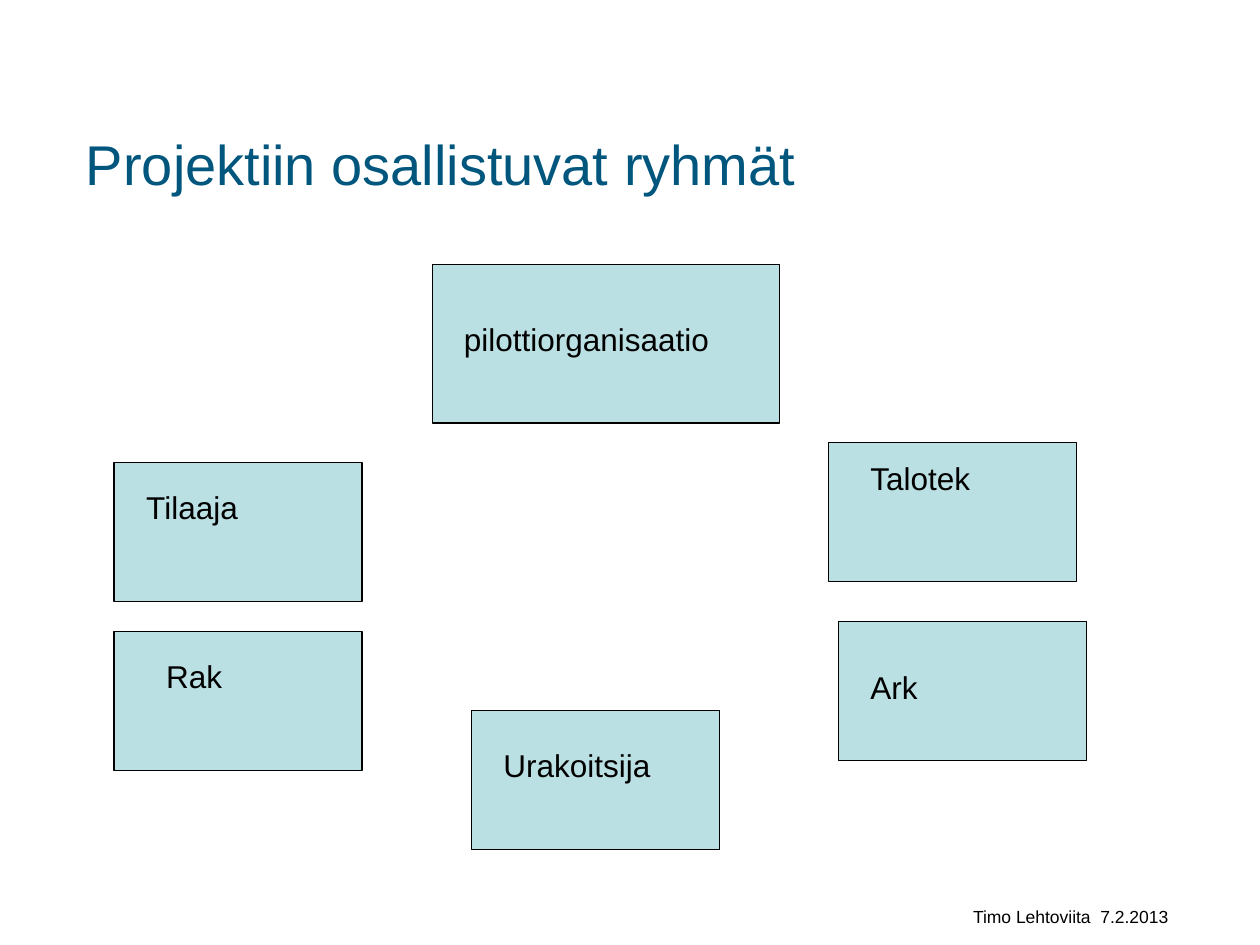
"""Build a slide showing the groups that take part in the project."""
from pptx import Presentation
from pptx.dml.color import RGBColor
from pptx.enum.shapes import MSO_SHAPE
from pptx.enum.text import MSO_ANCHOR, PP_ALIGN
from pptx.util import Pt

RECTANGLE = MSO_SHAPE.RECTANGLE
TOP, MIDDLE = MSO_ANCHOR.TOP, MSO_ANCHOR.MIDDLE
LEFT, RIGHT = PP_ALIGN.LEFT, PP_ALIGN.RIGHT

TITLE = "Projektiin osallistuvat ryhmät"
FOOTER = "Timo Lehtoviita  7.2.2013"
GROUP_SIZE = (141.75, 79.4)
LABEL_SIZE = (113, 51)
PILOT_SIZE = (198.5, 90.7)
PILOT_LABEL_SIZE = (164, 29)
GROUPS = [
    ("pilottiorganisaatio", (247, 151), PILOT_SIZE, (11, 28.3), PILOT_LABEL_SIZE),
    ("Talotek", (473.25, 253), GROUP_SIZE, (17, 5.7), LABEL_SIZE),
    ("Ark", (479, 355), GROUP_SIZE, (11.3, 23), LABEL_SIZE),
    ("Rak", (65.2, 360.75), GROUP_SIZE, (22.7, 11.3), LABEL_SIZE),
    ("Tilaaja", (65.2, 264.25), GROUP_SIZE, (11.3, 11.3), LABEL_SIZE),
    ("Urakoitsija", (269.3, 406), GROUP_SIZE, (11.3, 17), LABEL_SIZE),
]


def color(value):
    return RGBColor.from_string(value)


def add_text(page, text, position, size, font_size, ink="000000", align=LEFT, anchor=TOP, right=7.2):
    box = page.shapes.add_textbox(*map(Pt, position + size))
    frame = box.text_frame
    frame_format = {"word_wrap": True, "vertical_anchor": anchor, "margin_right": Pt(right)}
    for name, value in frame_format.items():
        setattr(frame, name, value)
    paragraph = frame.paragraphs[0]
    paragraph.alignment = align
    span = paragraph.add_run()
    span.text = text
    for name, value in {"name": "Arial", "size": Pt(font_size)}.items():
        setattr(span.font, name, value)
    span.font.color.rgb = color(ink)


def add_group(page, label, position, size, offset, label_size):
    box = page.shapes.add_shape(RECTANGLE, *map(Pt, position + size))
    box.shadow.inherit = False
    box.fill.solid()
    box.fill.fore_color.rgb = color("BBE0E3")
    box.line.color.rgb = color("000000")
    box.line.width = Pt(0.75)
    label_position = (position[0] + offset[0], position[1] + offset[1])
    add_text(page, label, label_position, label_size, 18)


def main():
    deck = Presentation()
    deck.slide_width, deck.slide_height = Pt(720), Pt(540)
    page = deck.slides.add_slide(deck.slide_layouts[6])
    add_text(page, FOOTER, (394, 514), (283.5, 19.5), 10, align=RIGHT, right=10)
    add_text(page, TITLE, (42, 48), (636, 90), 32, ink="00567D", anchor=MIDDLE)
    for group in GROUPS:
        add_group(page, *group)
    deck.save("out.pptx")


if __name__ == "__main__":
    main()
